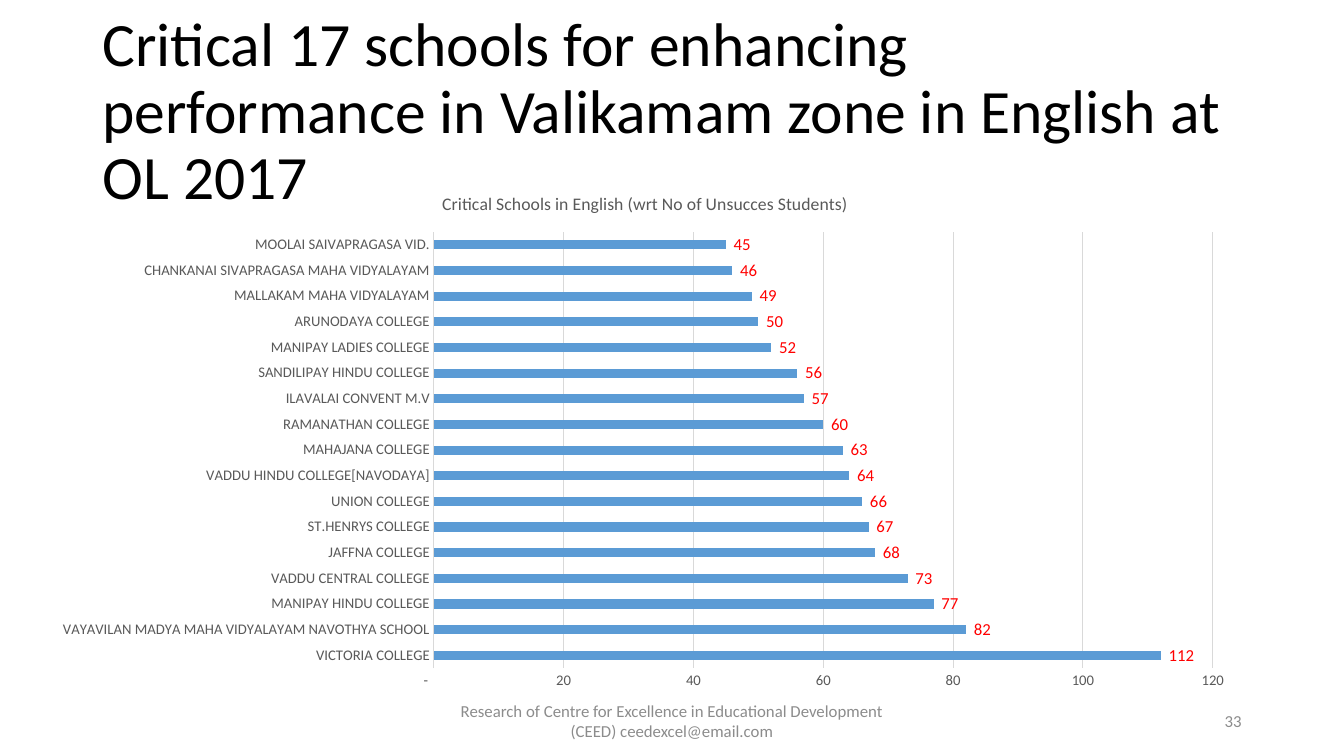
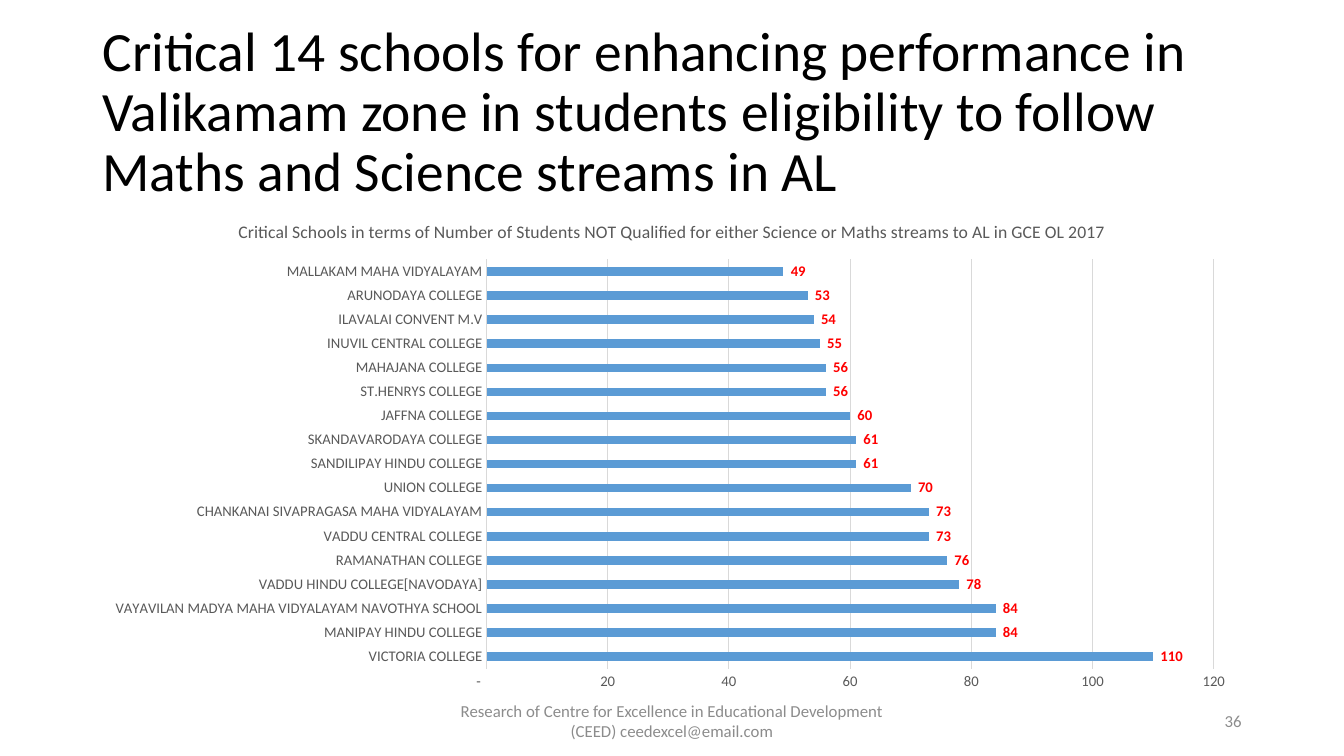
from pptx import Presentation
from pptx.chart.data import CategoryChartData as Data
from pptx.dml.color import RGBColor
from pptx.enum.chart import XL_CHART_TYPE as Kind, XL_LABEL_POSITION as Spot, XL_TICK_MARK as Tick
from pptx.enum.text import MSO_ANCHOR as Anchor, MSO_AUTO_SIZE as Fit, PP_ALIGN as Align
from pptx.util import Inches, Pt

COLS, ROWS = 160, 90
CELL = Inches(1) / 12
FACE = "Calibri"
BLACK, GREY, PALE, RULE, BLUE, RED = "000000", "595959", "8C8C8C", "D9D9D9", "5B9BD5", "FF0000"
FORM = r'_(* #,##0_);_(* \(#,##0\);_(* "-"??_);_(@_)'
HEAD = (11, 4.8, 138, 17.4)
FOOT = (53, 83.4, 54, 4.8)
PAGE = (113, 83.4, 36, 4.8)
NOTE = "Research of Centre for Excellence in Educational Development (CEED) ceedexcel@email.com"

SLIDES = [
    {
        "title": "Critical 17 schools for enhancing performance in Valikamam zone in English at OL 2017",
        "size": 44,
        "page": "33",
        "box": (4.6, 20.6, 144.4, 62.8),
        "name": "Critical Schools in English (wrt No of Unsucces Students)",
        "mark": (12, False),
        "rows": [
            ("VICTORIA COLLEGE", 112),
            ("VAYAVILAN MADYA MAHA VIDYALAYAM NAVOTHYA SCHOOL", 82),
            ("MANIPAY HINDU COLLEGE", 77),
            ("VADDU CENTRAL COLLEGE", 73),
            ("JAFFNA COLLEGE", 68),
            ("ST.HENRYS COLLEGE", 67),
            ("UNION COLLEGE", 66),
            ("VADDU HINDU COLLEGE[NAVODAYA]", 64),
            ("MAHAJANA COLLEGE", 63),
            ("RAMANATHAN COLLEGE", 60),
            ("ILAVALAI CONVENT M.V", 57),
            ("SANDILIPAY HINDU COLLEGE", 56),
            ("MANIPAY LADIES COLLEGE", 52),
            ("ARUNODAYA COLLEGE", 50),
            ("MALLAKAM MAHA VIDYALAYAM", 49),
            ("CHANKANAI SIVAPRAGASA MAHA VIDYALAYAM", 46),
            ("MOOLAI SAIVAPRAGASA VID.", 45),
        ],
    },
    {
        "title": "Critical 14 schools for enhancing performance in Valikamam zone in students "
                 "eligibility to follow Maths and Science streams in AL",
        "size": 39.6,
        "page": "36",
        "box": (11, 24, 138, 59.4),
        "name": "Critical Schools in terms of Number of Students NOT Qualified for either "
                "Science or Maths streams to AL in GCE OL 2017",
        "mark": (10.5, True),
        "rows": [
            ("VICTORIA COLLEGE", 110),
            ("MANIPAY HINDU COLLEGE", 84),
            ("VAYAVILAN MADYA MAHA VIDYALAYAM NAVOTHYA SCHOOL", 84),
            ("VADDU HINDU COLLEGE[NAVODAYA]", 78),
            ("RAMANATHAN COLLEGE", 76),
            ("VADDU CENTRAL COLLEGE", 73),
            ("CHANKANAI SIVAPRAGASA MAHA VIDYALAYAM", 73),
            ("UNION COLLEGE", 70),
            ("SANDILIPAY HINDU COLLEGE", 61),
            ("SKANDAVARODAYA COLLEGE", 61),
            ("JAFFNA COLLEGE", 60),
            ("ST.HENRYS COLLEGE", 56),
            ("MAHAJANA COLLEGE", 56),
            ("INUVIL CENTRAL COLLEGE", 55),
            ("ILAVALAI CONVENT M.V", 54),
            ("ARUNODAYA COLLEGE", 53),
            ("MALLAKAM MAHA VIDYALAYAM", 49),
        ],
    },
]


def grid(box):
    """Turn columns and rows into slide lengths."""
    return [round(n * CELL) for n in box]


def paint(font, size, color, bold=False):
    """Set face, size, weight and colour of a font."""
    font.name, font.size, font.bold = FACE, Pt(size), bold
    font.color.rgb = RGBColor.from_string(color)


def write(shape, box, text, size, color, align):
    """Place a text shape and fill it with one paragraph."""
    shape.left, shape.top, shape.width, shape.height = grid(box)
    frame = shape.text_frame
    frame.text = text
    frame.word_wrap, frame.auto_size = True, Fit.NONE
    frame.vertical_anchor = Anchor.MIDDLE
    para = frame.paragraphs[0]
    para.alignment = align
    paint(para.font, size, color)
    return para


def foot(slide, page):
    """Add the footer note and the page number."""
    for box, text, align in ((FOOT, NOTE, Align.CENTER), (PAGE, page, Align.RIGHT)):
        write(slide.shapes.add_textbox(*grid(box)), box, text, 12, PALE, align)


def rule(line):
    """Give a chart line its thin grey stroke."""
    line.color.rgb = RGBColor.from_string(RULE)
    line.width = Pt(0.75)


def axes(chart):
    """Style both axes of a bar chart."""
    cat, val = chart.category_axis, chart.value_axis
    for axis in (cat, val):
        axis.major_tick_mark = axis.minor_tick_mark = Tick.NONE
        paint(axis.tick_labels.font, 10.5, GREY)
    rule(cat.format.line)
    val.format.line.fill.background()
    val.minimum_scale, val.maximum_scale, val.major_unit = 0, 120, 20
    val.has_major_gridlines = True
    rule(val.major_gridlines.format.line)
    val.tick_labels.number_format = FORM
    val.tick_labels.number_format_is_linked = False


def bars(slide, box, name, rows, mark):
    """Add a titled bar chart of schools inside a box."""
    data = Data()
    data.categories = [school for school, _ in rows]
    data.add_series("Series 1", [count for _, count in rows])
    chart = slide.shapes.add_chart(Kind.BAR_CLUSTERED, *grid(box), data).chart
    paint(chart.font, 10.5, BLACK)
    chart.has_legend = False
    chart.has_title = True
    frame = chart.chart_title.text_frame
    frame.text = name
    paint(frame.paragraphs[0].font, 12.6, GREY)
    chart.chart_title.include_in_layout = False
    axes(chart)
    plot = chart.plots[0]
    plot.gap_width, plot.vary_by_categories = 182, False
    fill = plot.series[0].format.fill
    fill.solid()
    fill.fore_color.rgb = RGBColor.from_string(BLUE)
    tags = plot.series[0].data_labels
    tags.show_value, tags.position = True, Spot.OUTSIDE_END
    tags.number_format, tags.number_format_is_linked = FORM, False
    size, bold = mark
    paint(tags.font, size, RED, bold)


def build(deck, item):
    """Add one slide with title, chart and footer."""
    slide = deck.slides.add_slide(deck.slide_layouts[5])
    head = write(slide.shapes.title, HEAD, item["title"], item["size"], BLACK, Align.LEFT)
    head.line_spacing = 0.9
    foot(slide, item["page"])
    bars(slide, item["box"], item["name"], item["rows"], item["mark"])


def main():
    """Build and save the deck."""
    deck = Presentation()
    deck.slide_width, deck.slide_height = grid((COLS, ROWS))
    for item in SLIDES:
        build(deck, item)
    deck.save("out.pptx")


if __name__ == "__main__":
    main()
